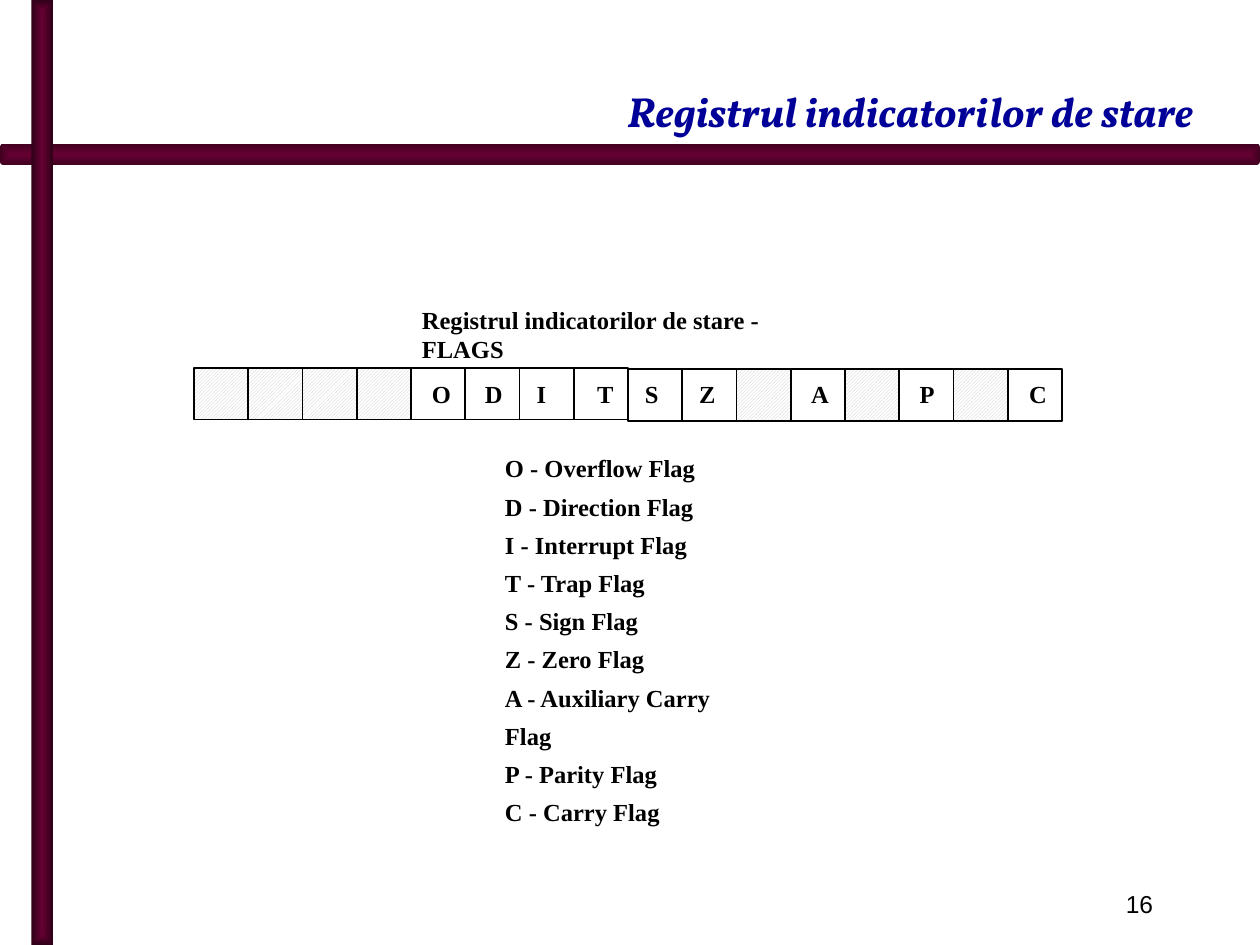
from dataclasses import dataclass

from lxml import etree
from pptx import Presentation
from pptx.dml.color import RGBColor
from pptx.enum.dml import MSO_PATTERN
from pptx.enum.shapes import MSO_SHAPE
from pptx.enum.text import MSO_ANCHOR, PP_ALIGN
from pptx.oxml.ns import qn
from pptx.util import Inches, Pt

RECTANGLE = MSO_SHAPE.RECTANGLE
ROUNDED = MSO_SHAPE.ROUNDED_RECTANGLE
HATCH = MSO_PATTERN.DARK_UPWARD_DIAGONAL
RIGHT, LEFT = PP_ALIGN.RIGHT, PP_ALIGN.LEFT
TOP, MIDDLE, BOTTOM = MSO_ANCHOR.TOP, MSO_ANCHOR.MIDDLE, MSO_ANCHOR.BOTTOM


@dataclass(frozen=True)
class Theme:
    title_font: str = "Vollkorn"
    body_font: str = "Times New Roman"
    number_font: str = "Arial"
    title_size: int = 24
    body_size: int = 14
    title: RGBColor = RGBColor(0x00, 0x00, 0x99)
    ink: RGBColor = RGBColor(0x00, 0x00, 0x00)
    paper: RGBColor = RGBColor(0xFF, 0xFF, 0xFF)
    hatch: RGBColor = RGBColor(0xCB, 0xCB, 0xCB)
    bar: RGBColor = RGBColor(0x66, 0x00, 0x33)
    bar_edge: RGBColor = RGBColor(0x41, 0x00, 0x20)
    bar_edge_dark: RGBColor = RGBColor(0x2F, 0x00, 0x18)


theme = Theme()
presentation = Presentation()
presentation.slide_width = Inches(10)
presentation.slide_height = Inches(7.5)
slide = presentation.slides.add_slide(presentation.slide_layouts[5])


def add_text(left, top, width, height, lines, font=theme.body_font, bold=True,
             align=LEFT, anchor=TOP, spacing=None):
    box = slide.shapes.add_textbox(Inches(left), Inches(top), Inches(width), Inches(height))
    frame = box.text_frame
    frame.word_wrap = True
    frame.vertical_anchor = anchor
    frame.text = "\n".join(lines)
    for paragraph in frame.paragraphs:
        paragraph.alignment = align
        paragraph.line_spacing = spacing
        paragraph.font.name = font
        paragraph.font.size = Pt(theme.body_size)
        paragraph.font.bold = bold
        paragraph.font.color.rgb = theme.ink


def add_bar(kind, left, top, width, height, edge):
    bar = slide.shapes.add_shape(kind, Inches(left), Inches(top), Inches(width), Inches(height))
    bar.shadow.inherit = False
    bar.line.fill.background()
    bar.fill.gradient()
    for stop, position, color in zip(bar.fill.gradient_stops, (0, 1), (theme.bar, edge)):
        stop.position = position
        stop.color.rgb = color
    # Shade from the centre towards the edges
    gradient = bar.element.spPr.find(qn("a:gradFill"))
    gradient.remove(gradient.find(qn("a:lin")))
    shading = etree.SubElement(gradient, qn("a:path"), {"path": "shape"})
    etree.SubElement(shading, qn("a:fillToRect"), dict.fromkeys("ltrb", "50000"))


# Crossing bars
add_bar(ROUNDED, 0, 1.14, 10, 0.17, theme.bar_edge)
add_bar(RECTANGLE, 0.25, 0, 0.17, 7.5, theme.bar_edge_dark)

# Title
title = slide.shapes.title
title.left, title.top = Inches(0.83), Inches(0.17)
title.width, title.height = Inches(8.74), Inches(0.96)
title.text_frame.text = "Registrul indicatorilor de stare"
title.text_frame.vertical_anchor = BOTTOM
paragraph = title.text_frame.paragraphs[0]
paragraph.alignment = RIGHT
paragraph.font.name = theme.title_font
paragraph.font.size = Pt(theme.title_size)
paragraph.font.bold = True
paragraph.font.italic = True
paragraph.font.color.rgb = theme.title

# Slide number
add_text(7.17, 6.92, 2.08, 0.5, ["16"], font=theme.number_font, bold=False,
         align=RIGHT, anchor=MIDDLE)

# Register heading
add_text(3.25, 2.37, 3.49, 0.33, ["Registrul indicatorilor de stare - FLAGS"])

# Register bits: the low byte sits slightly lower, unused bits are hatched
BITS = "----ODITSZ-A-P-C"
REGISTER_LEFT, REGISTER_RIGHT = 1.54, 8.43
bit_width = (REGISTER_RIGHT - REGISTER_LEFT) / len(BITS)
for index, bit in enumerate(BITS):
    cell = slide.shapes.add_shape(
        RECTANGLE, Inches(REGISTER_LEFT + index * bit_width),
        Inches(2.92 if index < 8 else 2.93), Inches(bit_width), Inches(0.41))
    cell.shadow.inherit = False
    cell.line.color.rgb = theme.ink
    cell.line.width = Pt(1)
    if bit == "-":
        cell.fill.patterned()
        cell.fill.pattern = HATCH
        cell.fill.fore_color.rgb = theme.hatch
        cell.fill.back_color.rgb = theme.paper
    else:
        cell.fill.background()

# Bit letters: left edge and width
LETTERS = {
    "O": (3.33, 0.36), "D": (3.75, 0.35), "I": (4.16, 0.28),
    "T": (4.64, 0.34), "S": (5.02, 0.30), "Z": (5.45, 0.33),
    "A": (6.34, 0.33), "P": (7.20, 0.32), "C": (8.07, 0.33),
}
for letter, (left, width) in LETTERS.items():
    add_text(left, 2.96, width, 0.33, [letter])

# Flag legend
FLAGS = ["O - Overflow Flag", "D - Direction Flag", "I - Interrupt Flag",
         "T - Trap Flag", "S - Sign Flag", "Z - Zero Flag",
         "A - Auxiliary Carry Flag", "P - Parity Flag", "C - Carry Flag"]
add_text(3.91, 3.48, 2.16, 3.02, FLAGS, spacing=1.3)

presentation.save("out.pptx")
